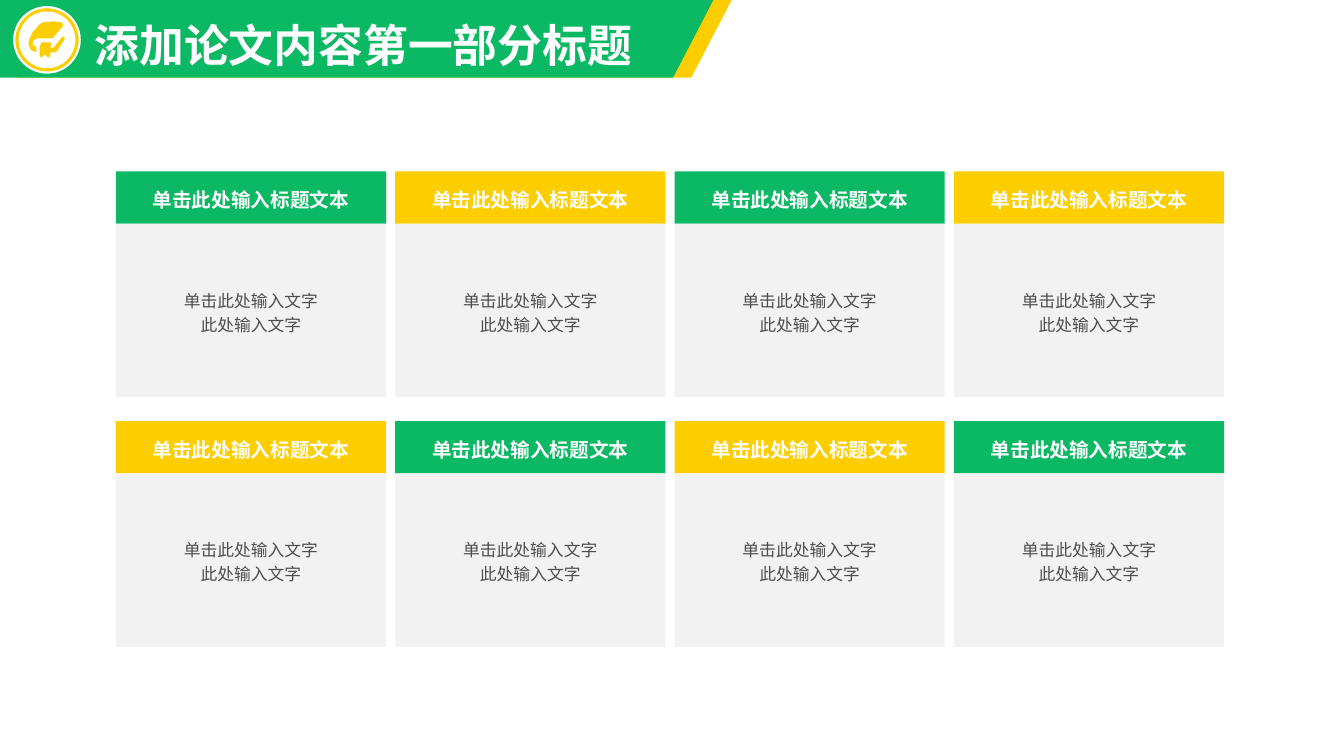
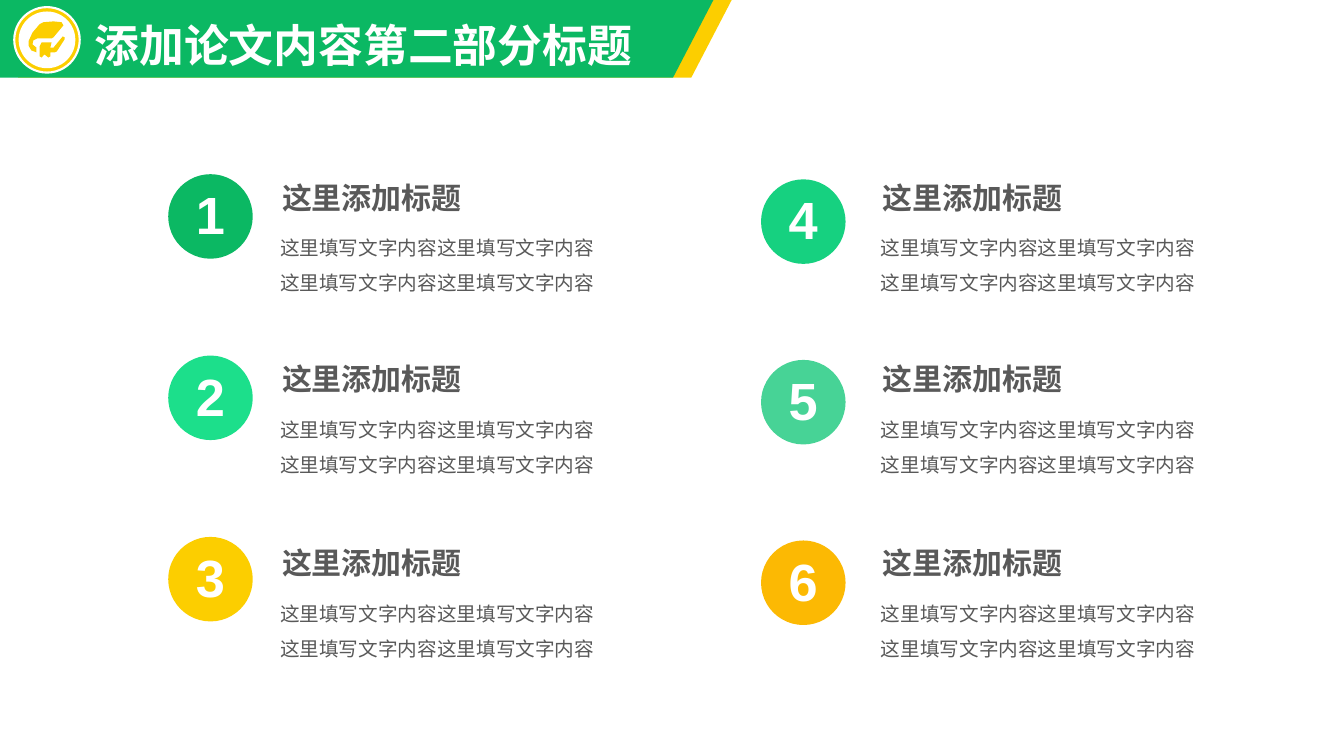
import dataclasses

import lxml.etree
import pptx
import pptx.dml.color
import pptx.enum.shapes
import pptx.enum.text
import pptx.oxml.ns
import pptx.util

Cm = pptx.util.Cm
ALIGN = pptx.enum.text.PP_ALIGN
ANCHOR = pptx.enum.text.MSO_ANCHOR
SHAPE = pptx.enum.shapes.MSO_SHAPE


@dataclasses.dataclass(frozen=True)
class Theme:
    green: str = "0BB863"
    yellow: str = "FCCE00"
    white: str = "FFFFFF"
    panel: str = "F2F2F2"
    card_text: str = "4D4D4D"
    item_text: str = "595959"
    mint: str = "1CDF8B"
    emerald: str = "16D180"
    sage: str = "47D396"
    amber: str = "FCB903"
    latin: str = "Arial"
    chinese: str = "Noto Sans CJK SC"
    title_size: float = 32
    number_size: float = 37.4
    item_title_size: float = 21.4
    label_size: float = 14
    card_body_size: float = 12


THEME = Theme()

CAP = [
    (0.99, 0.36), (1.19, 0.38), (1.24, 0.46), (0.99, 0.76), (0.94, 0.79), (0.58, 0.79),
    (0.48, 0.84), (0.46, 0.94), (0.56, 1.02), (0.56, 1.14), (0.43, 1.09), (0.36, 0.97),
    (0.36, 0.86), (0.46, 0.64), (0.64, 0.43), (0.74, 0.38),
]
TASSEL = [
    (1.22, 0.74), (1.27, 0.76), (1.27, 0.81), (1.07, 1.12), (1.02, 1.14), (0.91, 1.14),
    (0.91, 1.24), (0.86, 1.27), (0.76, 1.19), (0.69, 1.27), (0.64, 1.24), (0.64, 0.99),
    (0.69, 0.89), (0.94, 0.89), (0.91, 1.02), (0.99, 1.02),
]


def rgb(color):
    return pptx.dml.color.RGBColor.from_string(color)


def paint(shape, fill, line=None):
    shape.shadow.inherit = False
    shape.fill.solid()
    shape.fill.fore_color.rgb = rgb(fill)
    if line:
        shape.line.color.rgb = rgb(line)
        shape.line.width = pptx.util.Pt(1.5)
    else:
        shape.line.fill.background()
    return shape


def add_preset(slide, preset, left, top, width, height, fill, line=None):
    shape = slide.shapes.add_shape(preset, Cm(left), Cm(top), Cm(width), Cm(height))
    return paint(shape, fill, line)


def add_outline(slide, left, top, contours, fill):
    scaled = [[(round(x * 100), round(y * 100)) for x, y in contour] for contour in contours]
    builder = slide.shapes.build_freeform(*scaled[0][0], scale=Cm(0.01))
    for position, contour in enumerate(scaled):
        if position:
            builder.move_to(*contour[0])
        builder.add_line_segments(contour[1:], close=True)
    return paint(builder.convert_to_shape(Cm(left), Cm(top)), fill)


def write(shape, text, *, size, color, bold=False, font=THEME.latin,
          align=ALIGN.LEFT, anchor=ANCHOR.TOP, spacing=None):
    frame = shape.text_frame
    frame.word_wrap = True
    frame.vertical_anchor = anchor
    for position, line in enumerate(text.split("\n")):
        paragraph = frame.add_paragraph() if position else frame.paragraphs[0]
        paragraph.alignment = align
        paragraph.line_spacing = spacing
        run = paragraph.add_run()
        run.text = line
        run.font.size = pptx.util.Pt(size)
        run.font.bold = bold
        run.font.color.rgb = rgb(color)
        run.font.name = font
        east_asian = lxml.etree.SubElement(run.font._element, pptx.oxml.ns.qn("a:ea"))
        east_asian.set("typeface", THEME.chinese)
    return frame


def add_label(slide, left, top, width, height, text, **style):
    box = slide.shapes.add_textbox(Cm(left), Cm(top), Cm(width), Cm(height))
    frame = write(box, text, **style)
    frame.auto_size = pptx.enum.text.MSO_AUTO_SIZE.SHAPE_TO_FIT_TEXT


def add_badge(slide, left, top):
    add_preset(slide, SHAPE.OVAL, left, top, 1.65, 1.65, THEME.yellow, THEME.white)
    add_preset(slide, SHAPE.OVAL, left + 0.11, top + 0.11, 1.43, 1.43, THEME.white)
    add_outline(slide, left, top, [CAP, TASSEL], THEME.yellow)


def add_header(slide, title):
    width, height, slant = 17.98, 1.96, 1.02
    band = [(0, 0), (width, 0), (width - slant, height), (0, height)]
    for left, fill in ((0.46, THEME.yellow), (0, THEME.green)):
        add_outline(slide, left, 0, [band], fill)
    add_label(slide, 2.13, -0.36, 15.85, 2.06, title, size=THEME.title_size,
              color=THEME.white, bold=True, spacing=1.5)
    add_badge(slide, 0.36, 0.18)


def add_card(slide, left, top, width, height, accent, title, body):
    title_height = 1.32
    centred = dict(font=THEME.chinese, align=ALIGN.CENTER, anchor=ANCHOR.MIDDLE, spacing=1.2)
    heading = add_preset(slide, SHAPE.RECTANGLE, left, top, width, title_height, accent)
    write(heading, title, size=THEME.label_size, color=THEME.white, bold=True, **centred)
    panel = add_preset(slide, SHAPE.RECTANGLE, left, top + title_height, width,
                       height - title_height, THEME.panel)
    write(panel, body, size=THEME.card_body_size, color=THEME.card_text, **centred)


def add_number(slide, left, top, number, fill):
    disc = add_preset(slide, SHAPE.OVAL, left, top, 2.13, 2.13, fill)
    frame = write(disc, str(number), size=THEME.number_size, color=THEME.white, bold=True,
                  align=ALIGN.CENTER, anchor=ANCHOR.MIDDLE)
    frame.margin_left = frame.margin_right = frame.margin_top = 0
    frame.margin_bottom = Cm(0.13)


def add_item_text(slide, left, top, title, body):
    add_label(slide, left + 0.05, top, 7.72, 1.17, title, size=THEME.item_title_size,
              color=THEME.item_text, bold=True)
    add_label(slide, left, top + 1.13, 8.76, 2.06, body, size=THEME.label_size,
              color=THEME.item_text, spacing=1.5)


def build_cards_slide(slide):
    add_header(slide, "添加论文内容第一部分标题")
    accents = (THEME.green, THEME.yellow)
    for row in range(2):
        for column in range(4):
            add_card(slide, 2.92 + 7.04 * column, 4.32 + 6.29 * row, 6.81, 5.69,
                     accents[(row + column) % 2],
                     "单击此处输入标题文本", "单击此处输入文字\n此处输入文字")


def build_items_slide(slide):
    add_header(slide, "添加论文内容第二部分标题")
    text_tops = (4.39, 8.97, 13.61)
    columns = (
        (4.24, 4.39, 4.57, 6.81, (THEME.green, THEME.mint, THEME.yellow)),
        (19.18, 4.52, 4.55, 21.95, (THEME.emerald, THEME.sage, THEME.amber)),
    )
    number = 0
    for disc_left, disc_top, pitch, text_left, fills in columns:
        for row, fill in enumerate(fills):
            number += 1
            add_number(slide, disc_left, disc_top + pitch * row, number, fill)
            add_item_text(slide, text_left, text_tops[row], "这里添加标题", "这里填写文字内容" * 4)


def main():
    deck = pptx.Presentation()
    deck.slide_width, deck.slide_height = Cm(33.87), Cm(19.05)
    for build in (build_cards_slide, build_items_slide):
        build(deck.slides.add_slide(deck.slide_layouts[6]))
    deck.save("out.pptx")


if __name__ == "__main__":
    main()
